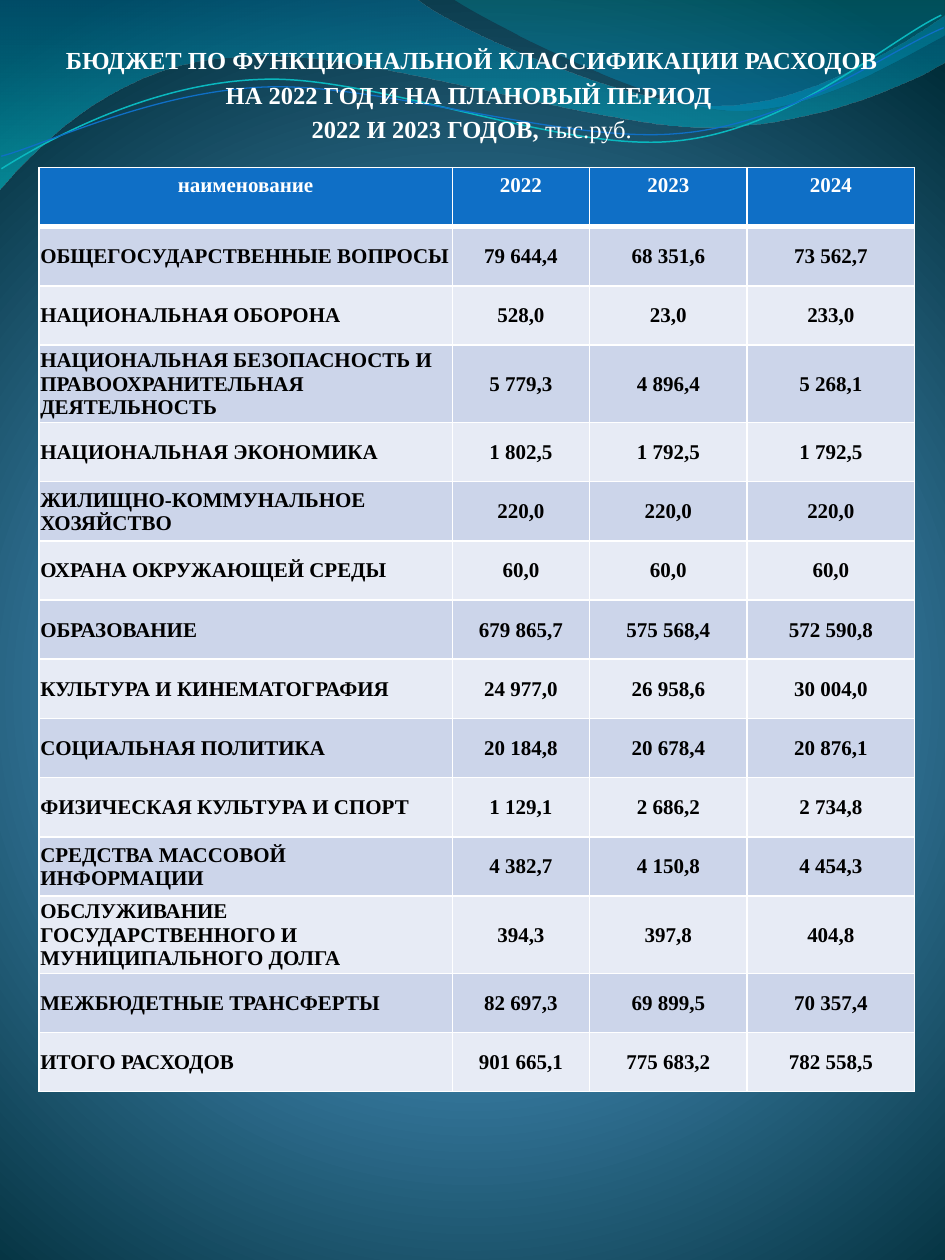
import math
from dataclasses import dataclass

import lxml.etree
import pptx
import pptx.dml.color
import pptx.enum.text
import pptx.oxml
import pptx.oxml.ns
import pptx.util

Inches = pptx.util.Inches
Pt = pptx.util.Pt
qn = pptx.oxml.ns.qn
CENTER = pptx.enum.text.PP_ALIGN.CENTER
LEFT = pptx.enum.text.PP_ALIGN.LEFT
NAMESPACES = pptx.oxml.ns.nsdecls("a", "p")


@dataclass(frozen=True)
class Theme:
    font: str = "Times New Roman"
    white: str = "FFFFFF"
    black: str = "000000"
    header: str = "0F6FC6"
    bands: tuple[str, str] = ("CCD5EA", "E7EBF5")
    title_size: float = 14
    table_size: float = 12
    border: float = 1
    header_border: float = 3


@dataclass(frozen=True)
class Stop:
    position: int
    color: str
    alpha: int = 100


@dataclass(frozen=True)
class Wave:
    start: tuple[float, float]
    steps: tuple[tuple[float, ...], ...]
    stops: tuple[Stop, ...] = ()
    line: str = ""
    width: float = 0
    pivot: tuple[float, float] = (0, 0)
    tilt: float = 0


THEME = Theme()
BACKDROP = (Stop(0, "4AA0D6"), Stop(25, "4C98C7"), Stop(100, "002C38"))
WAVES = (
    Wave((0, -0.01), (
        (3.3, -0.01),
        (3.57, 0.22, 4.98, 0.84, 5.69, 0.84),
        (6.4, 0.84, 7.19, 0.34, 7.5, 0.12),
        (7.51, 0.48),
        (7.38, 0.58, 6.52, 1.01, 5.59, 1.01),
        (4.66, 1, 2.86, 0.37, 1.93, 0.45),
        (0.97, 0.47, 0.34, 1.11, -0.01, 1.51),
    ), stops=(Stop(0, "0074A1", 45), Stop(100, "00C6CF", 55))),
    Wave((3.59, -0.01), (
        (3.82, 0.15, 5.11, 0.82, 5.77, 0.87),
        (6.42, 0.92, 7.21, 0.43, 7.5, 0.28),
        (7.5, 0),
    ), stops=(Stop(0, "00A1A9", 30), Stop(80, "008BBF", 45))),
    Wave((0.01, 1.34), (
        (0.36, 1.12, 1.18, 0.66, 2.07, 0.63),
        (2.96, 0.59, 4.45, 1.21, 5.35, 1.12),
        (6.26, 1.04, 7.03, 0.33, 7.47, 0.12),
    ), line="0AB8BF", width=0.85, pivot=(3.74, 0.78), tilt=-2.7),
    Wave((0.01, 1.24), (
        (0.36, 1.15, 1.22, 0.72, 2.12, 0.69),
        (3.02, 0.66, 4.49, 1.14, 5.38, 1.06),
        (6.28, 0.99, 7.05, 0.4, 7.49, 0.22),
    ), line="0F6FC6", width=0.75, pivot=(3.75, 0.78), tilt=-2.7),
)
TITLE = (
    (("БЮДЖЕТ ПО ФУНКЦИОНАЛЬНОЙ КЛАССИФИКАЦИИ РАСХОДОВ", True),),
    (("НА 2022 ГОД И НА ПЛАНОВЫЙ ПЕРИОД ", True),),
    (("2022 И 2023 ГОДОВ,", True), (" тыс.руб.", False)),
)
COLUMN_WIDTHS = (3.28, 1.09, 1.25, 1.33)
ROW_HEIGHT = 0.47
BUDGET = (
    ("наименование", "2022", "2023", "2024"),
    ("ОБЩЕГОСУДАРСТВЕННЫЕ ВОПРОСЫ", "79 644,4", "68 351,6", "73 562,7"),
    ("НАЦИОНАЛЬНАЯ ОБОРОНА", "528,0", "23,0", "233,0"),
    ("НАЦИОНАЛЬНАЯ БЕЗОПАСНОСТЬ И ПРАВООХРАНИТЕЛЬНАЯ ДЕЯТЕЛЬНОСТЬ", "5 779,3", "4 896,4", "5 268,1"),
    ("НАЦИОНАЛЬНАЯ ЭКОНОМИКА", "1 802,5", "1 792,5", "1 792,5"),
    ("ЖИЛИЩНО-КОММУНАЛЬНОЕ ХОЗЯЙСТВО", "220,0", "220,0", "220,0"),
    ("ОХРАНА ОКРУЖАЮЩЕЙ СРЕДЫ", "60,0", "60,0", "60,0"),
    ("ОБРАЗОВАНИЕ", "679 865,7", "575 568,4", "572 590,8"),
    ("КУЛЬТУРА И КИНЕМАТОГРАФИЯ", "24 977,0", "26 958,6", "30 004,0"),
    ("СОЦИАЛЬНАЯ ПОЛИТИКА", "20 184,8", "20 678,4", "20 876,1"),
    ("ФИЗИЧЕСКАЯ КУЛЬТУРА И СПОРТ", "1 129,1", "2 686,2", "2 734,8"),
    ("СРЕДСТВА МАССОВОЙ ИНФОРМАЦИИ", "4 382,7", "4 150,8", "4 454,3"),
    ("ОБСЛУЖИВАНИЕ ГОСУДАРСТВЕННОГО И МУНИЦИПАЛЬНОГО ДОЛГА", "394,3", "397,8", "404,8"),
    ("МЕЖБЮДЕТНЫЕ ТРАНСФЕРТЫ", "82 697,3", "69 899,5", "70 357,4"),
    ("ИТОГО РАСХОДОВ", "901 665,1", "775 683,2", "782 558,5"),
)


def rgb(color: str) -> pptx.dml.color.RGBColor:
    return pptx.dml.color.RGBColor.from_string(color)


def apply_format(target, values: dict) -> None:
    for name, value in values.items():
        setattr(target, name, value)


def style_run(run, size: float, color: str, bold: bool) -> None:
    apply_format(run.font, {"name": THEME.font, "size": Pt(size), "bold": bold})
    run.font.color.rgb = rgb(color)


def gradient_xml(stops: tuple[Stop, ...], direction: str) -> str:
    marks = "".join(
        f'<a:gs pos="{stop.position * 1000}"><a:srgbClr val="{stop.color}">'
        f'<a:alpha val="{stop.alpha * 1000}"/></a:srgbClr></a:gs>'
        for stop in stops
    )
    return f'<a:gradFill {NAMESPACES} rotWithShape="1"><a:gsLst>{marks}</a:gsLst>{direction}</a:gradFill>'


def paint_background(slide) -> None:
    glow = ('<a:path path="circle"><a:fillToRect l="10000" t="110000" '
            'r="10000" b="100000"/></a:path>')
    slide.element.cSld.insert(0, pptx.oxml.parse_xml(
        f"<p:bg {NAMESPACES}><p:bgPr>{gradient_xml(BACKDROP, glow)}<a:effectLst/></p:bgPr></p:bg>"
    ))


def level(wave: Wave, x: float, y: float) -> tuple[int, int]:
    angle = math.radians(-wave.tilt)
    dx, dy = x - wave.pivot[0], y - wave.pivot[1]
    return (Inches(wave.pivot[0] + dx * math.cos(angle) - dy * math.sin(angle)),
            Inches(wave.pivot[1] + dx * math.sin(angle) + dy * math.cos(angle)))


def draw_wave(slide, wave: Wave) -> None:
    points = [level(wave, *step[i:i + 2]) for step in wave.steps for i in range(0, len(step), 2)]
    builder = slide.shapes.build_freeform(*level(wave, *wave.start))
    builder.add_line_segments(points, close=bool(wave.stops))
    ribbon = builder.convert_to_shape()
    segments = iter(list(ribbon.element.iter(qn("a:lnTo"))))
    for step in wave.steps:
        segment = next(segments)
        if len(step) == 6:
            curve = lxml.etree.Element(qn("a:cubicBezTo"))
            segment.addprevious(curve)
            for part in (segment, next(segments), next(segments)):
                curve.append(part[0])
                part.getparent().remove(part)
    ribbon.rotation = wave.tilt
    ribbon.shadow.inherit = False
    ribbon.fill.background()
    if wave.stops:
        ribbon.line.fill.background()
        properties = ribbon.element.spPr
        fill = pptx.oxml.parse_xml(gradient_xml(wave.stops, '<a:lin ang="5400000" scaled="1"/>'))
        properties.replace(properties.find(qn("a:noFill")), fill)
    else:
        ribbon.line.color.rgb = rgb(wave.line)
        ribbon.line.width = Pt(wave.width)


def draw_title(slide) -> None:
    heading = slide.shapes.add_textbox(Inches(0.23), Inches(0.31), Inches(7.03), Inches(9.3)).text_frame
    heading.word_wrap = True
    sides = ("left", "right", "top", "bottom")
    apply_format(heading, {f"margin_{side}": Inches(0.05) for side in sides})
    for index, line in enumerate(TITLE):
        paragraph = heading.add_paragraph() if index else heading.paragraphs[0]
        paragraph.alignment = CENTER
        if index:
            paragraph.space_before = Pt(2.8)
        for wording, bold in line:
            run = paragraph.add_run()
            run.text = wording
            style_run(run, THEME.title_size, THEME.white, bold)


def draw_borders(cell, row: int) -> None:
    widths = {"lnL": THEME.border, "lnR": THEME.border,
              "lnT": THEME.header_border if row == 1 else THEME.border,
              "lnB": THEME.header_border if row == 0 else THEME.border}
    properties = cell._tc.get_or_add_tcPr()
    for position, (side, width) in enumerate(widths.items()):
        edge = lxml.etree.Element(qn(f"a:{side}"), w=str(Pt(width)))
        fill = lxml.etree.SubElement(edge, qn("a:solidFill"))
        lxml.etree.SubElement(fill, qn("a:srgbClr"), val=THEME.white)
        properties.insert(position, edge)


def fill_cell(cell, wording: str, row: int, column: int) -> None:
    cell.fill.solid()
    cell.fill.fore_color.rgb = rgb(THEME.bands[(row - 1) % 2] if row else THEME.header)
    if row:
        apply_format(cell, {
            "vertical_anchor": pptx.enum.text.MSO_ANCHOR.MIDDLE, "margin_left": Inches(0.01),
            "margin_right": Inches(0.01), "margin_top": Inches(0.01), "margin_bottom": Pt(0.3),
        })
    paragraph = cell.text_frame.paragraphs[0]
    paragraph.alignment = LEFT if row and column == 0 else CENTER
    run = paragraph.add_run()
    run.text = wording
    style_run(run, THEME.table_size, THEME.black if row else THEME.white, True)
    draw_borders(cell, row)


def draw_budget(slide) -> None:
    frame = slide.shapes.add_table(
        len(BUDGET), len(COLUMN_WIDTHS), Inches(0.31), Inches(1.33),
        Inches(sum(COLUMN_WIDTHS)), Inches(ROW_HEIGHT * len(BUDGET)),
    )
    budget = frame.table
    for column, width in zip(budget.columns, COLUMN_WIDTHS):
        column.width = Inches(width)
    for row, entries in enumerate(BUDGET):
        budget.rows[row].height = Inches(ROW_HEIGHT)
        for column, wording in enumerate(entries):
            fill_cell(budget.cell(row, column), wording, row, column)
    frame.height = Inches(7.31)


def main() -> None:
    deck = pptx.Presentation()
    apply_format(deck, {"slide_width": Inches(7.5), "slide_height": Inches(10)})
    slide = deck.slides.add_slide(deck.slide_layouts[6])
    paint_background(slide)
    for wave in WAVES:
        draw_wave(slide, wave)
    draw_title(slide)
    draw_budget(slide)
    deck.save("out.pptx")


if __name__ == "__main__":
    main()
